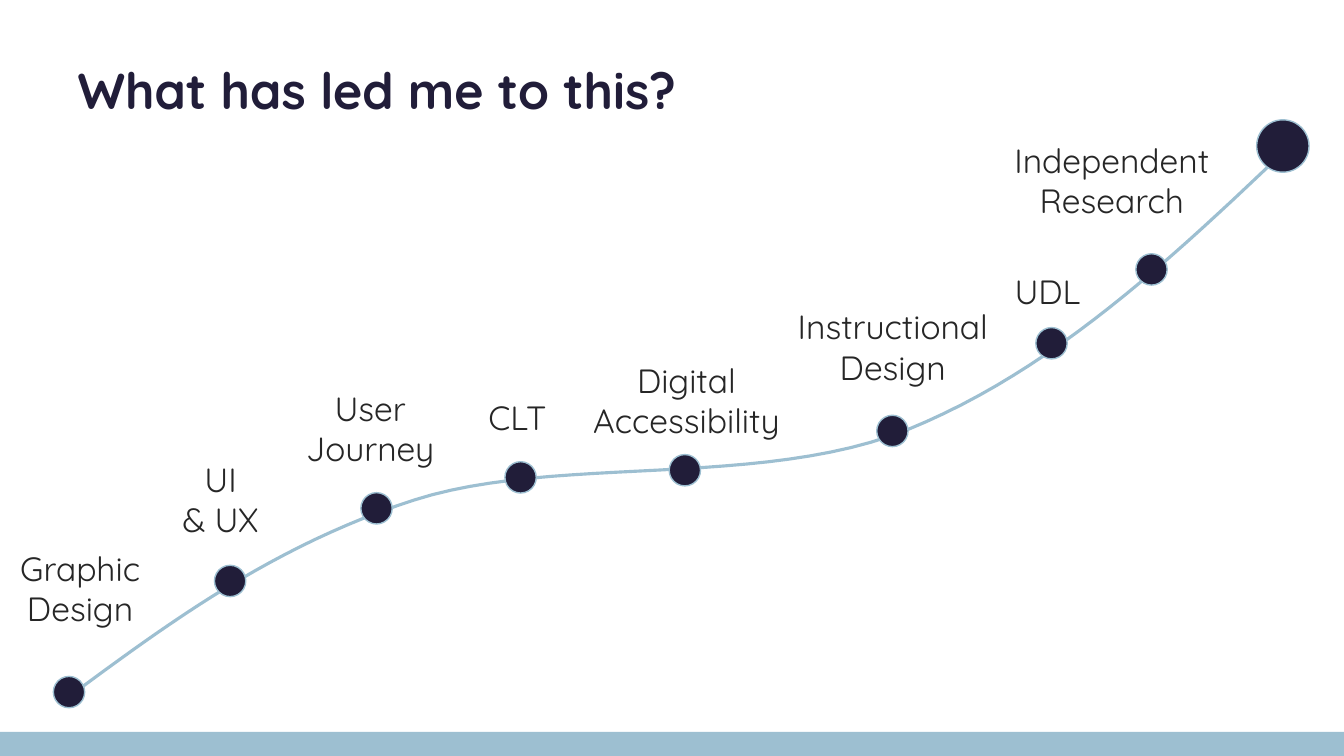
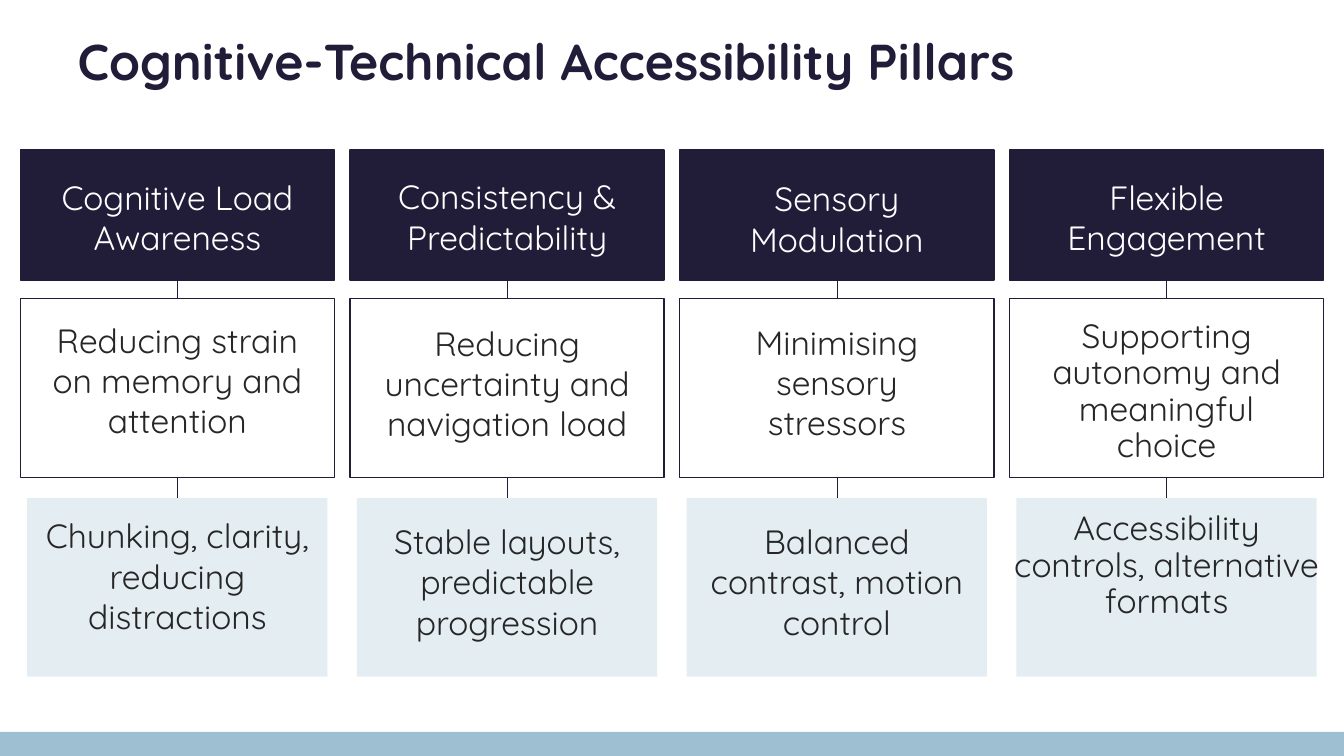
import pptx
import pptx.util
import pptx.dml.color
import pptx.enum.shapes
import pptx.enum.text
import pptx.oxml
import pptx.oxml.ns

Cm, Pt = pptx.util.Cm, pptx.util.Pt
RGB = pptx.dml.color.RGBColor.from_string
KIND = pptx.enum.shapes.MSO_SHAPE
ALIGN = pptx.enum.text.PP_ALIGN
ANCHOR = pptx.enum.text.MSO_ANCHOR

NAVY, BLUE, INK, WHITE = "211D39", "9DBFD1", "262626", "FFFFFF"
FONT = "Quicksand"
WIDE, HIGH = 33.87, 19.05


def paint(shape, fill=None, line=None, weight=1):
    """Set fill and outline; None means no fill or no outline."""
    shape.shadow.inherit = False
    if fill:
        shape.fill.solid()
        shape.fill.fore_color.rgb = RGB(fill)
    else:
        shape.fill.background()
    if line:
        shape.line.color.rgb = RGB(line)
        shape.line.width = Pt(weight)
    else:
        shape.line.fill.background()


def write(shape, text, color, size=24, bold=False, align=ALIGN.CENTER, space=None):
    frame = shape.text_frame
    frame.text = text
    frame.word_wrap = True
    for para in frame.paragraphs:
        para.alignment = align
        para.line_spacing = space
        para.font.name = FONT
        para.font.size = Pt(size)
        para.font.bold = bold
        para.font.color.rgb = RGB(color)


deck = pptx.Presentation()
deck.slide_width, deck.slide_height = Cm(WIDE), Cm(HIGH)

# Title and bottom band of every slide
heads = [
    ("What has led me to this?", 1.22, 17.73, 1.93, ANCHOR.BOTTOM),
    ("Cognitive-Technical Accessibility Pillars", 0.81, 30.89, 1.85, ANCHOR.TOP),
]
slides = []
for text, top, width, height, anchor in heads:
    slide = deck.slides.add_slide(deck.slide_layouts[5])
    title = slide.shapes.title
    title.left, title.top = Cm(1.7), Cm(top)
    title.width, title.height = Cm(width), Cm(height)
    write(title, text, NAVY, 36, True, ALIGN.LEFT, 0.9)
    title.text_frame.vertical_anchor = anchor
    title.text_frame.auto_size = pptx.enum.text.MSO_AUTO_SIZE.NONE
    band = slide.shapes.add_shape(KIND.RECTANGLE, 0, Cm(18.44), Cm(WIDE), Cm(0.61))
    paint(band, BLUE)
    slides.append(slide)
path, pillars = slides

# Slide 1: rising curve, sampled from three Bezier pieces
knots = [
    (1.68, 17.6), (4.29, 15.67), (6.91, 13.74), (10.44, 12.6), (14, 11.46),
    (19.2, 12.32), (22.89, 10.82), (26.57, 9.32), (29.57, 6.48), (32.56, 3.63),
]
STEPS = 24
points = []
for start in range(0, 9, 3):
    piece = knots[start:start + 4]
    for step in range(1, STEPS + 1):
        t = step / STEPS
        mix = ((1 - t) ** 3, 3 * t * (1 - t) ** 2, 3 * t * t * (1 - t), t ** 3)
        points.append(tuple(Cm(sum(m * knot[axis] for m, knot in zip(mix, piece)))
                            for axis in (0, 1)))
pen = path.shapes.build_freeform(Cm(knots[0][0]), Cm(knots[0][1]))
pen.add_line_segments(points, close=False)
paint(pen.convert_to_shape(), None, BLUE, 2.25)

# Dot centre and size
dots = [
    (1.74, 17.44, 0.79), (5.8, 14.64, 0.79), (9.49, 12.81, 0.79),
    (13.12, 12.03, 0.79), (17.26, 11.85, 0.79), (22.49, 10.86, 0.79),
    (26.5, 8.65, 0.79), (29.02, 6.79, 0.79), (32.33, 3.68, 1.32),
]
for x, y, size in dots:
    dot = path.shapes.add_shape(KIND.OVAL, Cm(x - size / 2), Cm(y - size / 2),
                                Cm(size), Cm(size))
    paint(dot, NAVY, BLUE)

# Label centre, top and text
labels = [
    (2.02, 13.67, "Graphic\nDesign"), (5.56, 11.43, "UI\n& UX"),
    (9.33, 9.65, "User\nJourney"), (13.04, 9.88, "CLT"),
    (17.3, 8.94, "Digital Accessibility"), (22.5, 7.59, "Instructional Design"),
    (26.4, 6.71, "UDL"), (28.02, 3.4, "Independent Research"),
]
for x, top, text in labels:
    width = min(6, 2 * x)
    height = 1.27 if text in ("CLT", "UDL") else 2.31
    box = path.shapes.add_textbox(Cm(x - width / 2), Cm(top), Cm(width), Cm(height))
    write(box, text, INK)

# Slide 2: four columns of three cards joined by a line
LEFT, PITCH, CARD = 0.51, 8.31, 7.92
rows = [  # top, height, width, fill, line, text colour
    (3.78, 3.28, CARD, NAVY, NAVY, WHITE),
    (7.52, 4.52, CARD, WHITE, NAVY, INK),
    (12.55, 4.5, 7.57, BLUE, None, INK),
]
columns = [  # text and its distance from the card's top
    [("Cognitive Load Awareness", 0.68),
     ("Reducing strain on memory and attention", 0.53),
     ("Chunking, clarity, reducing distractions", 0.43)],
    [("Consistency & Predictability", 0.66),
     ("Reducing uncertainty and navigation load", 0.61),
     ("Stable layouts, predictable progression", 0.58)],
    [("Sensory\nModulation", 0.71),
     ("Minimising sensory\nstressors", 0.58),
     ("Balanced contrast, motion control", 0.58)],
    [("Flexible Engagement", 0.68),
     ("Supporting autonomy and meaningful choice", 0.51),
     ("Accessibility\vcontrols, alternative\nformats", 0.33)],
]
for col, cards in enumerate(columns):
    mid = LEFT + col * PITCH + CARD / 2
    link = pillars.shapes.add_connector(pptx.enum.shapes.MSO_CONNECTOR.STRAIGHT,
                                        Cm(mid), Cm(7.06), Cm(mid), Cm(12.55))
    link.line.color.rgb = RGB(NAVY)
    link.line.width = Pt(0.5)
    pptx.oxml.ns.qn("a:effectLst")
    link._element.spPr.append(pptx.oxml.parse_xml(
        "<a:effectLst %s/>" % pptx.oxml.ns.nsdecls("a")))
    for (text, inset), (top, height, width, fill, line, color) in zip(cards, rows):
        card = pillars.shapes.add_shape(KIND.RECTANGLE, Cm(mid - width / 2), Cm(top),
                                        Cm(width), Cm(height))
        paint(card, fill, line)
        tight = col == 3 and color == INK
        write(card, text, color, space=Pt(26) if tight else None)
        frame = card.text_frame
        frame.vertical_anchor = ANCHOR.TOP
        frame.margin_top = Cm(inset)
        frame.margin_left = frame.margin_right = Cm(0.4 if line else 0.2)
        frame.word_wrap = "\v" not in text
        if fill == BLUE:
            tint = card.fill._xPr.find(".//" + pptx.oxml.ns.qn("a:srgbClr"))
            tint.append(pptx.oxml.parse_xml(
                '<a:alpha %s val="28000"/>' % pptx.oxml.ns.nsdecls("a")))

deck.save("out.pptx")
